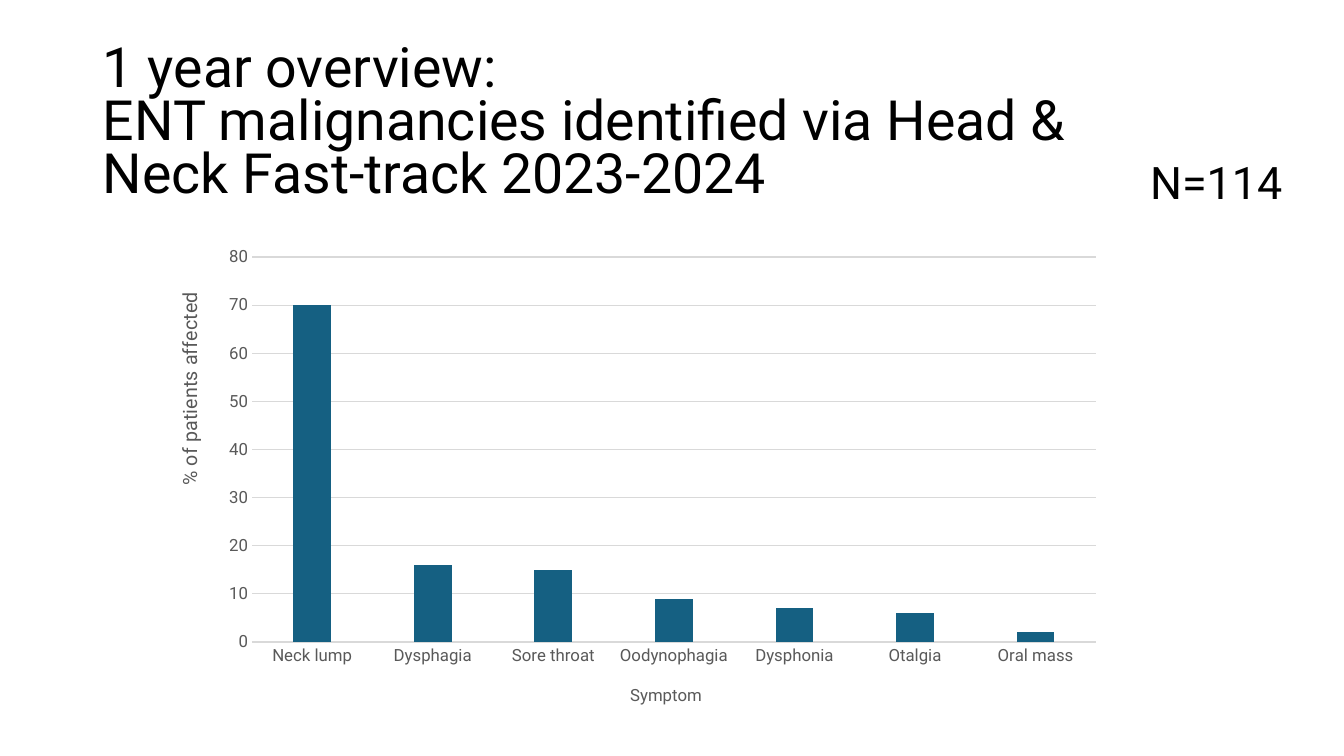
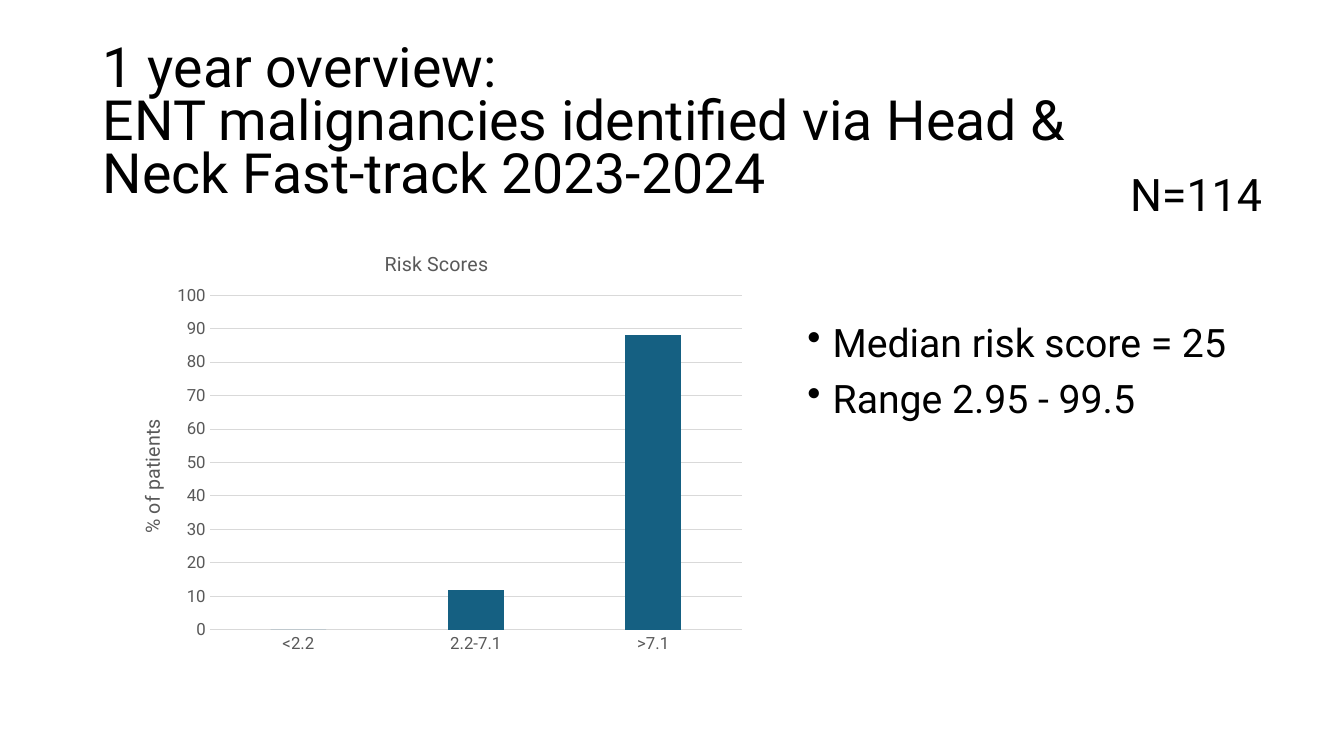
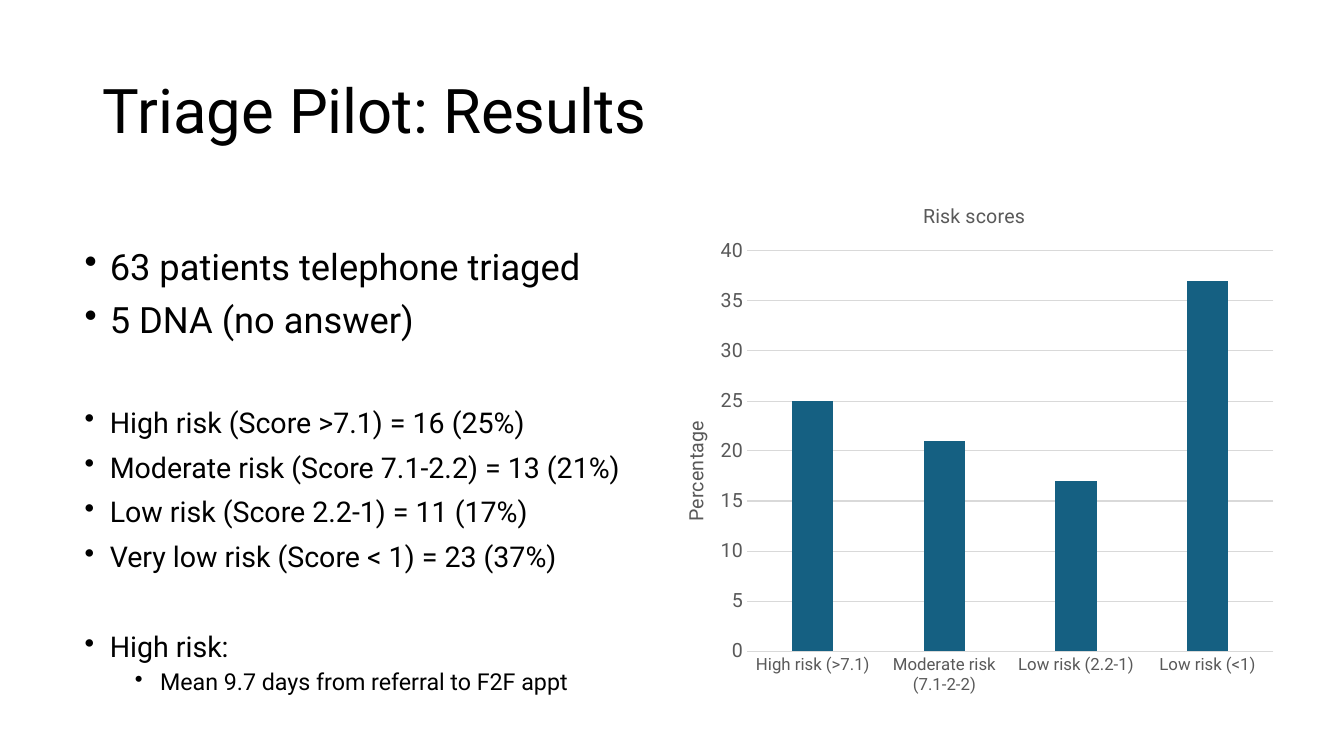
from copy import deepcopy
from dataclasses import dataclass
from typing import Optional

from lxml import etree
from pptx import Presentation
from pptx.chart.data import CategoryChartData
from pptx.dml.color import RGBColor
from pptx.enum import chart as ch, text
from pptx.oxml.ns import qn
from pptx.util import Inches, Pt


# Theme and content records
@dataclass(frozen=True)
class Theme:
    font: str = "Roboto"
    ink: str = "000000"
    muted: str = "595959"
    grid: str = "D9D9D9"
    bar: str = "156082"
    title: float = 44
    long_title: float = 39.6
    sample: float = 32
    label: float = 12
    heading: float = 14


@dataclass(frozen=True)
class Box:
    x: float
    y: float
    w: float
    h: float

    def emu(self) -> tuple:
        return tuple(Inches(v) for v in (self.x, self.y, self.w, self.h))


@dataclass(frozen=True)
class Bullet:
    text: str
    size: float
    before: float = 10
    level: int = 0


@dataclass(frozen=True)
class Caption:
    text: str
    x: float
    y: float
    size: float = Theme.heading


@dataclass(frozen=True)
class BarChart:
    box: Box
    plot: Box
    values: dict
    top: int
    step: int
    value_title: Caption
    category_title: Optional[Caption] = None
    title: Optional[Caption] = None
    value_size: float = Theme.label


T = Theme()
OVERVIEW = ("1 year overview:\v"
            "ENT malignancies identified via Head & Neck Fast-track 2023-2024")
OVERVIEW_BOX = Box(0.92, 0.34, 10.77, 1.79)


def style_font(font, size: float, color: str) -> None:
    for name, value in {"name": T.font, "size": Pt(size), "bold": False}.items():
        setattr(font, name, value)
    font.color.rgb = RGBColor.from_string(color)


# Text
def add_title_slide(prs, title: str, box: Box, size: float, spacing: float):
    s = prs.slides.add_slide(prs.slide_layouts[5])
    sp = s.shapes.title
    sp.left, sp.top, sp.width, sp.height = box.emu()
    tf = sp.text_frame
    tf.text = title
    frame = {"word_wrap": True, "auto_size": text.MSO_AUTO_SIZE.NONE,
             "vertical_anchor": text.MSO_ANCHOR.MIDDLE}
    for name, value in frame.items():
        setattr(tf, name, value)
    p = tf.paragraphs[0]
    p.alignment, p.line_spacing = text.PP_ALIGN.LEFT, spacing
    for r in p.runs:
        style_font(r.font, size, T.ink)
    # A line break carries its own text size
    for br in p._p.findall(qn("a:br")):
        br.insert(0, deepcopy(p.runs[0]._r.rPr))
    return s


def add_text_frame(s, box: Box):
    tf = s.shapes.add_textbox(*box.emu()).text_frame
    tf.word_wrap = True
    return tf


def add_sample_size(s, x: float, y: float) -> None:
    tf = add_text_frame(s, Box(x, y, 1.77, 0.64))
    tf.auto_size = text.MSO_AUTO_SIZE.SHAPE_TO_FIT_TEXT
    r = tf.paragraphs[0].add_run()
    r.text = "N=114"
    style_font(r.font, T.sample, T.ink)


def add_bullets(s, box: Box, bullets: list) -> None:
    tf = add_text_frame(s, box)
    for i, bullet in enumerate(bullets):
        p = tf.add_paragraph() if i else tf.paragraphs[0]
        p.level, p.line_spacing, p.space_before = bullet.level, 0.9, Pt(bullet.before)
        pPr = p._p.get_or_add_pPr()
        pPr.set("marL", str(Inches(0.25 + 0.5 * bullet.level)))
        pPr.set("indent", str(Inches(-0.25)))
        etree.SubElement(pPr, qn("a:buChar")).set("char", "•")
        r = p.add_run()
        r.text = bullet.text
        style_font(r.font, bullet.size, T.ink)


# Charts
def make_layout(values: dict):
    layout = etree.Element(qn("c:layout"))
    manual = etree.SubElement(layout, qn("c:manualLayout"))
    for name, value in values.items():
        etree.SubElement(manual, qn(f"c:{name}")).set("val", str(value))
    return layout


def drop_layout(parent) -> None:
    for old in parent.findall(qn("c:layout")):
        parent.remove(old)


def place_plot(chart, box: Box, plot: Box) -> None:
    area = chart._chartSpace.chart.plotArea
    drop_layout(area)
    area.insert(0, make_layout({
        "layoutTarget": "inner", "xMode": "edge", "yMode": "edge",
        "x": round((plot.x - box.x) / box.w, 4),
        "y": round((plot.y - box.y) / box.h, 4),
        "w": round(plot.w / box.w, 4), "h": round(plot.h / box.h, 4)}))


def write_caption(title, caption: Caption, box: Box, upright: bool = False) -> None:
    tf = title.text_frame
    tf.text = caption.text
    style_font(tf.paragraphs[0].runs[0].font, caption.size, T.muted)
    if upright:
        tf._txBody.bodyPr.set("rot", "-5400000")
        tf._txBody.bodyPr.set("vert", "horz")
    drop_layout(title._element)
    title._element.find(qn("c:tx")).addnext(make_layout({
        "xMode": "edge", "yMode": "edge",
        "x": round((caption.x - box.x) / box.w, 4),
        "y": round((caption.y - box.y) / box.h, 4)}))


def add_bar_chart(s, c: BarChart) -> None:
    data = CategoryChartData(number_format="0")
    data.categories = list(c.values)
    data.add_series("Series 1", list(c.values.values()))
    chart = s.shapes.add_chart(
        ch.XL_CHART_TYPE.COLUMN_CLUSTERED, *c.box.emu(), data).chart
    style_font(chart.font, 10, T.ink)
    chart.has_legend = False
    chart.has_title = c.title is not None
    if c.title:
        write_caption(chart.chart_title, c.title, c.box)

    # Bars
    plot = chart.plots[0]
    for name, value in {"gap_width": 219, "overlap": -27,
                        "vary_by_categories": False}.items():
        setattr(plot, name, value)
    fill = plot.series[0].format.fill
    fill.solid()
    fill.fore_color.rgb = RGBColor.from_string(T.bar)

    # Axes
    cat, val = chart.category_axis, chart.value_axis
    for axis, size in ((cat, T.label), (val, c.value_size)):
        axis.major_tick_mark = axis.minor_tick_mark = ch.XL_TICK_MARK.NONE
        style_font(axis.tick_labels.font, size, T.muted)
    for name, value in {"minimum_scale": 0, "maximum_scale": c.top,
                        "major_unit": c.step, "has_major_gridlines": True}.items():
        setattr(val, name, value)
    for line in (cat.format.line, val.major_gridlines.format.line):
        line.width = Pt(0.75)
        line.color.rgb = RGBColor.from_string(T.grid)
    val.format.line.fill.background()
    write_caption(val.axis_title, c.value_title, c.box, upright=True)
    if c.category_title:
        write_caption(cat.axis_title, c.category_title, c.box)
    place_plot(chart, c.box, c.plot)


# Slides
def add_symptoms(prs) -> None:
    s = add_title_slide(prs, OVERVIEW, OVERVIEW_BOX, T.long_title, 0.8)
    add_bar_chart(s, BarChart(
        box=Box(1.56, 2.36, 9.5, 4.8), plot=Box(2.5, 2.55, 8.37, 3.82),
        values={"Neck lump": 70, "Dysphagia": 16, "Sore throat": 15,
                "Oodynophagia": 9, "Dysphonia": 7, "Otalgia": 6, "Oral mass": 2},
        top=80, step=10,
        value_title=Caption("% of patients affected", 1.71, 2.86),
        category_title=Caption("Symptom", 6.22, 6.75, T.label)))
    add_sample_size(s, 11.31, 1.49)


def add_risk_scores(prs) -> None:
    s = add_title_slide(prs, OVERVIEW, OVERVIEW_BOX, T.long_title, 0.8)
    add_bar_chart(s, BarChart(
        box=Box(1.1, 2.25, 6.38, 4.33), plot=Box(2.08, 2.93, 5.28, 3.32),
        values={"<2.2": 0, "2.2-7.1": 12, ">7.1": 88}, top=100, step=10,
        value_title=Caption("% of patients", 1.34, 4.12),
        title=Caption("Risk Scores", 3.78, 2.45)))
    add_bullets(s, Box(7.91, 3.16, 4.51, 3.59), [
        Bullet("Median risk score = 25", 28), Bullet("Range 2.95 - 99.5", 28)])
    add_sample_size(s, 11.11, 1.61)


def add_triage_results(prs) -> None:
    s = add_title_slide(prs, "Triage Pilot: Results",
                        Box(0.92, 0.4, 11.5, 1.45), T.title, 0.9)
    large, medium, small = 25.9, 20.4, 16.6
    add_bullets(s, Box(0.74, 2.42, 5.55, 4.58), [
        Bullet("63 patients telephone triaged", large),
        Bullet("5 DNA (no answer)", large),
        Bullet("High risk (Score >7.1) = 16 (25%)", medium, before=48),
        Bullet("Moderate risk (Score 7.1-2.2) = 13 (21%)", medium),
        Bullet("Low risk (Score 2.2-1) = 11 (17%)", medium),
        Bullet("Very low risk (Score < 1) = 23 (37%)", medium),
        Bullet("High risk:", medium, before=42),
        Bullet("Mean 9.7 days from referral to F2F appt", small, before=5, level=1)])
    add_bar_chart(s, BarChart(
        box=Box(6.49, 1.75, 6.27, 5.25), plot=Box(7.41, 2.49, 5.22, 3.97),
        values={"High risk (>7.1)": 25, "Moderate risk (7.1-2-2)": 21,
                "Low risk (2.2-1)": 17, "Low risk (<1)": 37},
        top=40, step=5, value_size=T.heading,
        value_title=Caption("Percentage", 6.73, 4.14),
        title=Caption("Risk scores", 9.12, 1.97)))


def main() -> None:
    prs = Presentation()
    prs.slide_width, prs.slide_height = Inches(13.33), Inches(7.5)
    for add_slide in (add_symptoms, add_risk_scores, add_triage_results):
        add_slide(prs)
    prs.save("out.pptx")


if __name__ == "__main__":
    main()
